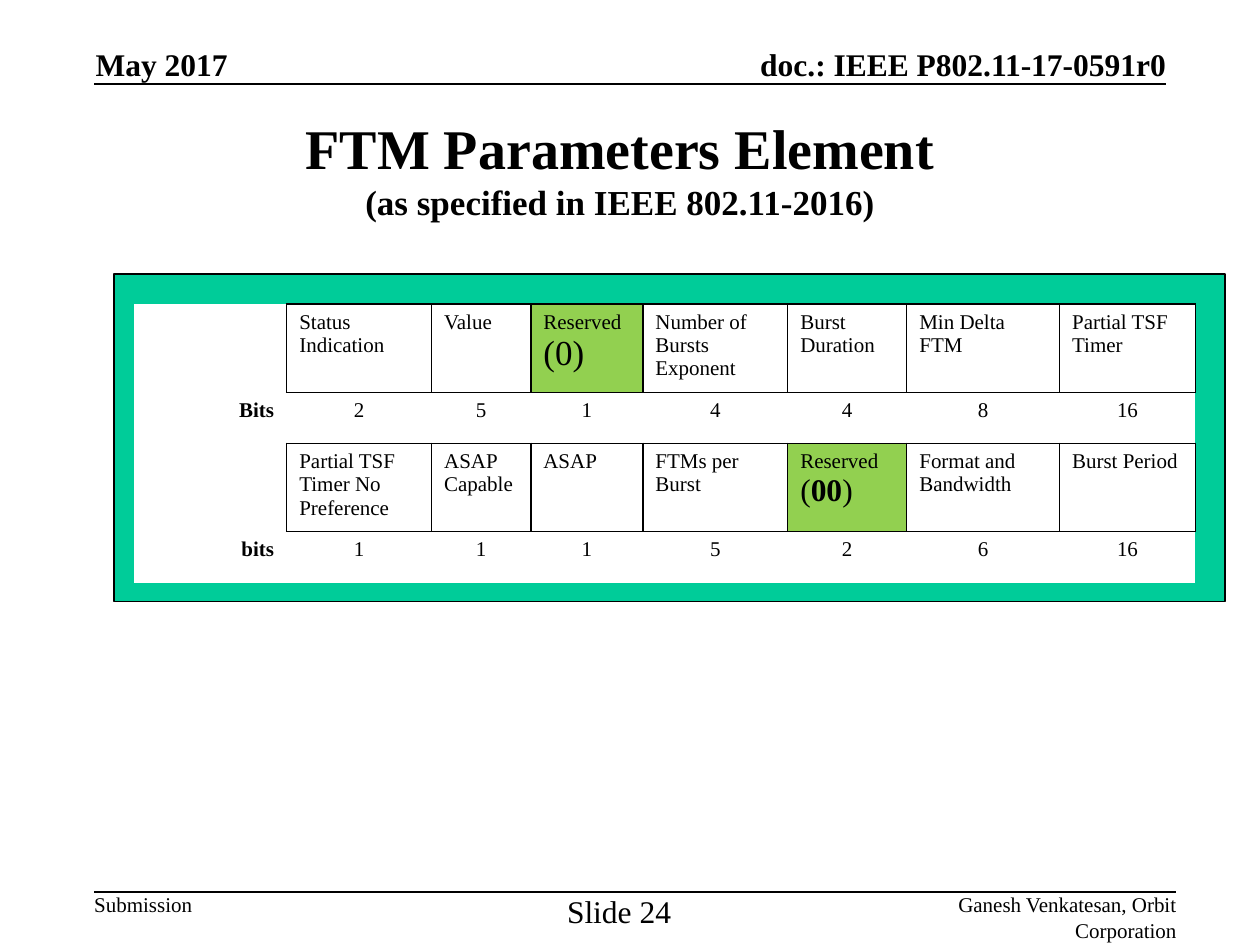
import copy
from lxml import etree
from pptx import Presentation
from pptx import util as u
from pptx.dml.color import RGBColor
from pptx.enum import shapes, text
from pptx.oxml.ns import qn

FONT = "Times New Roman"
COLORS = {"ink": "000000", "panel": "00CC99", "cell": "FFFFFF", "reserved": "92D050"}
LEFT, CENTER, RIGHT = text.PP_ALIGN.LEFT, text.PP_ALIGN.CENTER, text.PP_ALIGN.RIGHT
TOP, MIDDLE, BOTTOM = text.MSO_ANCHOR.TOP, text.MSO_ANCHOR.MIDDLE, text.MSO_ANCHOR.BOTTOM

# Content: runs are (text, size, bold)
TITLE = [("FTM Parameters Element\v", 32, True),
         ("(as specified in IEEE 802.11-2016)", 20, True)]
LABELS = [  # text, size, bold, align, anchor, left, top, width, height (cm)
    ("May 2017", 18, True, LEFT, BOTTOM, 1.93, 0.91, 2.7, 0.77),
    ("doc.: IEEE P802.11-17-0591r0", 18, True, RIGHT, BOTTOM, 13.97, 0.91, 9.54, 0.77),
    ("Submission", 12, False, LEFT, TOP, 1.9, 17.98, 2, 0.51),
    ("Slide 24", 18, False, CENTER, TOP, 11.43, 17.98, 2.1, 0.64),
    ("Ganesh Venkatesan, Orbit Corporation", 12, False, RIGHT, TOP, 17.22, 17.98, 6.5, 0.51),
]
RULES = [(1.9, 23.5, 1.7), (1.9, 23.7, 17.98)]  # x1, x2, y (cm)
FIELD_ROWS = [
    ("Bits", [("Status Indication", 2), ("Value", 5), ("Reserved ", 1),
              ("Number of Bursts Exponent", 4), ("Burst Duration", 4),
              ("Min Delta FTM", 8), ("Partial TSF Timer", 16)]),
    ("bits", [("Partial TSF Timer No Preference", 1), ("ASAP Capable", 1), ("ASAP", 1),
              ("FTMs per Burst", 5), ("Reserved ", 2),
              ("Format and Bandwidth", 6), ("Burst Period", 16)]),
]
RESERVED_VALUES = [[("(0)", 20, False)],
                   [("(", 18, False), ("00", 18, True), (")", 18, False)]]
COL_WIDTHS = [3.08, 2.92, 2, 2.26, 2.92, 2.4, 3.08, 2.74]
FIELD_HEIGHT, BITS_HEIGHT = 1.66, 1.03


def rgb(name):
    return RGBColor.from_string(COLORS[name])


def write(p, runs, align=LEFT):
    p.alignment = align
    for words, size, bold in runs:
        first = len(p.runs)
        if words.endswith("\v"):
            p.add_run().text = words[:-1]
            p.add_line_break()
        else:
            p.add_run().text = words
        r = p.runs[first]
        r.font.name, r.font.size, r.font.bold = FONT, u.Pt(size), bold
        r.font.color.rgb = rgb("ink")
    for br in p._p.iter(qn("a:br")):
        br.insert(0, copy.deepcopy(p.runs[0]._r.rPr))


def set_borders(cell, edges):
    tcPr = cell._tc.get_or_add_tcPr()
    for edge in "LRTB":
        ln = etree.SubElement(tcPr, qn(f"a:ln{edge}"), w=str(u.Pt(1)))
        if edge in edges:
            fill = etree.SubElement(ln, qn("a:solidFill"))
            etree.SubElement(fill, qn("a:srgbClr"), val=COLORS["ink"])
        else:
            etree.SubElement(ln, qn("a:noFill"))


def fill_cell(cell, runs, align, edges, color="cell"):
    set_borders(cell, edges)
    cell.fill.solid()
    cell.fill.fore_color.rgb = rgb(color)
    write(cell.text_frame.paragraphs[0], runs, align)


prs = Presentation()
prs.slide_width, prs.slide_height = u.Cm(25.4), u.Cm(19.05)
s = prs.slides.add_slide(prs.slide_layouts[5])

# Title
title = s.shapes.title
title.left, title.top, title.width, title.height = map(u.Cm, (1.7, 1.9, 21.6, 2.97))
tf = title.text_frame
tf.auto_size, tf.vertical_anchor = text.MSO_AUTO_SIZE.NONE, MIDDLE
write(tf.paragraphs[0], TITLE, CENTER)

# Header and footer rules
for x1, x2, y in RULES:
    line = s.shapes.add_connector(shapes.MSO_CONNECTOR.STRAIGHT,
                                  u.Cm(x1), u.Cm(y), u.Cm(x2), u.Cm(y))
    line.line.color.rgb, line.line.width = rgb("ink"), u.Pt(1)
    etree.SubElement(line._element.spPr, qn("a:effectLst"))

# Header and footer labels
for words, size, bold, align, anchor, *box in LABELS:
    tf = s.shapes.add_textbox(*map(u.Cm, box)).text_frame
    tf.margin_left = tf.margin_right = tf.margin_top = tf.margin_bottom = 0
    tf.word_wrap, tf.vertical_anchor = False, anchor
    write(tf.paragraphs[0], [(words, size, bold)], align)

# Panel behind the table
panel = s.shapes.add_shape(shapes.MSO_SHAPE.RECTANGLE,
                           *map(u.Cm, (2.3, 5.53, 22.4, 6.6)))
panel.shadow.inherit = False
panel.fill.solid()
panel.fill.fore_color.rgb = rgb("panel")
panel.line.color.rgb, panel.line.width = rgb("ink"), u.Pt(1)

# Field table: each group is a row of names above a row of bit counts
heights = [FIELD_HEIGHT, BITS_HEIGHT] * len(FIELD_ROWS)
table = s.shapes.add_table(len(heights), len(COL_WIDTHS), u.Cm(2.7), u.Cm(6.13),
                           u.Cm(sum(COL_WIDTHS)), u.Cm(sum(heights))).table
table.first_row = table.horz_banding = False
for col, width in zip(table.columns, COL_WIDTHS):
    col.width = u.Cm(width)
for row, height in zip(table.rows, heights):
    row.height = u.Cm(height)

for i, (unit, fields) in enumerate(FIELD_ROWS):
    top, below = 2 * i, 2 * i + 1
    fill_cell(table.cell(top, 0), [], LEFT, "R")
    fill_cell(table.cell(below, 0), [(unit, 12, True)], RIGHT, "")
    bits_edges = "T" if below == len(heights) - 1 else "TB"
    for c, (name, bits) in enumerate(fields, 1):
        reserved = name.startswith("Reserved")
        runs = [(name, 12, False)] + (RESERVED_VALUES[i] if reserved else [])
        fill_cell(table.cell(top, c), runs, LEFT, "LRTB",
                  "reserved" if reserved else "cell")
        fill_cell(table.cell(below, c), [(str(bits), 12, False)], CENTER, bits_edges)

prs.save("out.pptx")
